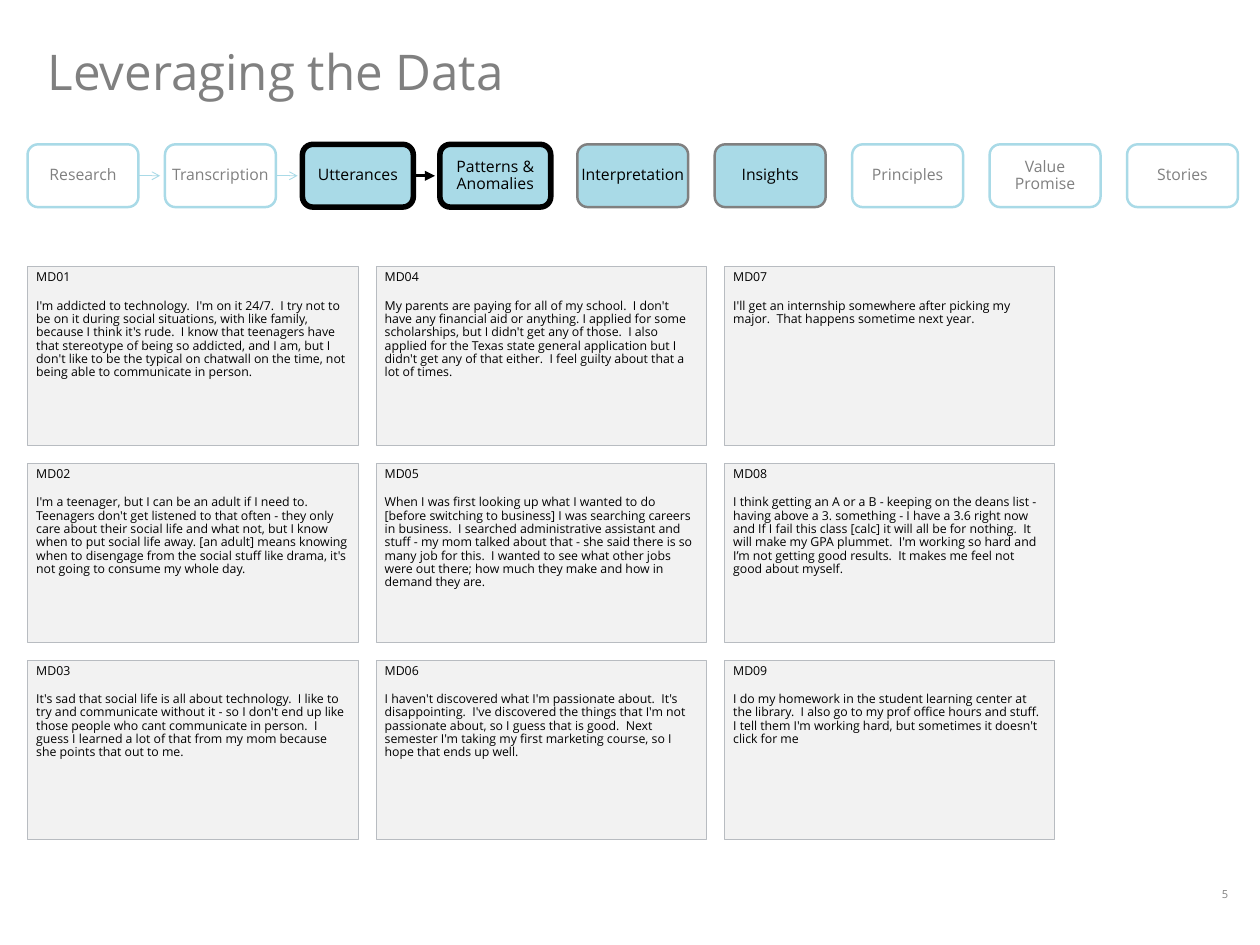
from dataclasses import dataclass

from lxml import etree
from pptx import Presentation
from pptx import util as u
from pptx.dml.color import RGBColor
from pptx.enum import shapes, text
from pptx.oxml import ns


@dataclass(frozen=True)
class Theme:
    font: str = "Open Sans"
    black: str = "000000"
    grey: str = "808080"
    white: str = "FFFFFF"
    aqua: str = "A9DAE7"
    card_fill: str = "F2F2F2"
    card_line: str = "B8BCC1"
    title_size: float = 40
    step_size: float = 12.8
    quote_size: float = 10
    number_size: float = 9
    line_spacing: float = 0.9


THEME = Theme()

LEFT = 0.79
STEP_TOP, STEP_WIDTH, STEP_HEIGHT, STEP_PITCH = 4.14, 3.18, 1.8, 3.94
ARROW_LENGTH = 0.62
CARD_TOP, CARD_WIDTH, CARD_HEIGHT = 7.65, 9.47, 5.13
CARD_PITCH_X, CARD_PITCH_Y, CARD_ROWS = 9.99, 5.64, 3

STEP_STYLES = {
    "outside": (THEME.white, THEME.aqua, 2, THEME.grey),
    "current": (THEME.aqua, THEME.black, 4.5, THEME.black),
    "next": (THEME.aqua, THEME.grey, 2, THEME.black),
}

STEPS = [
    ("Research", "outside"),
    ("Transcription", "outside"),
    ("Utterances", "current"),
    ("Patterns & Anomalies", "current"),
    ("Interpretation", "next"),
    ("Insights", "next"),
    ("Principles", "outside"),
    ("Value\nPromise", "outside"),
    ("Stories", "outside"),
]

ARROWS = [
    (THEME.aqua, 0.75, "arrow"),
    (THEME.aqua, 0.75, "arrow"),
    (THEME.black, 2.75, "triangle"),
]

QUOTES = [
    "I'm addicted to technology.  I'm on it 24/7.  I try not to be on it during social situations, "
    "with like family, because I think it's rude.  I know that teenagers have that stereotype of "
    "being so addicted, and I am, but I don't like to be the typical on chatwall on the time, not "
    "being able to communicate in person.",
    "I'm a teenager, but I can be an adult if I need to.  Teenagers don't get listened to that "
    "often - they only care about their social life and what not, but I know when to put social "
    "life away. [an adult] means knowing when to disengage from the social stuff like drama, it's "
    "not going to consume my whole day.",
    "It's sad that social life is all about technology.  I like to try and communicate without it "
    "- so I don't end up like those people who cant communicate in person.  I guess I learned a "
    "lot of that from my mom because she points that out to me.",
    "My parents are paying for all of my school.  I don't have any financial aid or anything. I "
    "applied for some scholarships, but I didn't get any of those.  I also applied for the Texas "
    "state general application but I didn't get any of that either.  I feel guilty about that a "
    "lot of times.",
    "When I was first looking up what I wanted to do [before switching to business] I was "
    "searching careers in business.  I searched administrative assistant and stuff - my mom talked "
    "about that - she said there is so many job for this.  I wanted to see what other jobs were "
    "out there; how much they make and how in demand they are.",
    "I haven't discovered what I'm passionate about.  It's disappointing.  I've discovered the "
    "things that I'm not passionate about, so I guess that is good.  Next semester I'm taking my "
    "first marketing course, so I hope that ends up well.",
    "I'll get an internship somewhere after picking my major.  That happens sometime next year.",
    "I think getting an A or a B - keeping on the deans list - having above a 3. something - I "
    "have a 3.6 right now and If I fail this class [calc] it will all be for nothing.  It will "
    "make my GPA plummet.  I'm working so hard and I’m not getting good results.  It makes me feel "
    "not good about myself.",
    "I do my homework in the student learning center at the library.  I also go to my prof office "
    "hours and stuff.  I tell them I'm working hard, but sometimes it doesn't click for me",
]


def write_text(shape, content, *, size, color=THEME.black, align=text.PP_ALIGN.LEFT,
               anchor=text.MSO_ANCHOR.TOP, margins=(0.25, 0.13), gap=0):
    frame = shape.text_frame
    frame.word_wrap = True
    frame.auto_size = text.MSO_AUTO_SIZE.NONE
    frame.vertical_anchor = anchor
    frame.margin_left = frame.margin_right = u.Cm(margins[0])
    frame.margin_top = frame.margin_bottom = u.Cm(margins[1])
    frame.text = content
    for index, paragraph in enumerate(frame.paragraphs):
        paragraph.alignment = align
        paragraph.line_spacing = THEME.line_spacing
        paragraph.space_before = u.Pt(gap if index else 0)
        paragraph.space_after = u.Pt(0)
        paragraph.font.name = THEME.font
        paragraph.font.size = u.Pt(size)
        paragraph.font.color.rgb = RGBColor.from_string(color)


class SlideBuilder:
    def __init__(self, theme, slide):
        self.theme = theme
        self.slide = slide

    def title(self, content, left, top, width, height):
        shape = self.slide.shapes.title
        shape.left, shape.top = u.Cm(left), u.Cm(top)
        shape.width, shape.height = u.Cm(width), u.Cm(height)
        write_text(shape, content, size=self.theme.title_size, color=self.theme.grey,
                   anchor=text.MSO_ANCHOR.MIDDLE, margins=(0, 0))

    def box(self, kind, left, top, width, height, fill, line, line_width):
        shape = self.slide.shapes.add_shape(
            kind, u.Cm(left), u.Cm(top), u.Cm(width), u.Cm(height))
        shape.shadow.inherit = False
        shape.fill.solid()
        shape.fill.fore_color.rgb = RGBColor.from_string(fill)
        shape.line.color.rgb = RGBColor.from_string(line)
        shape.line.width = u.Pt(line_width)
        return shape

    def step(self, label, style, left):
        fill, line, line_width, color = STEP_STYLES[style]
        shape = self.box(shapes.MSO_SHAPE.ROUNDED_RECTANGLE, left, STEP_TOP,
                         STEP_WIDTH, STEP_HEIGHT, fill, line, line_width)
        write_text(shape, label, size=self.theme.step_size, color=color,
                   align=text.PP_ALIGN.CENTER, anchor=text.MSO_ANCHOR.MIDDLE, margins=(0, 0.13))
        return shape

    def arrow(self, source, color, line_width, head):
        start = source.left + source.width
        middle = source.top + source.height // 2
        connector = self.slide.shapes.add_connector(
            shapes.MSO_CONNECTOR.STRAIGHT, start, middle, start + u.Cm(ARROW_LENGTH), middle)
        connector.begin_connect(source, 3)
        connector.line.color.rgb = RGBColor.from_string(color)
        connector.line.width = u.Pt(line_width)
        etree.SubElement(connector.line._get_or_add_ln(), ns.qn("a:tailEnd"), type=head)
        etree.SubElement(connector._element.spPr, ns.qn("a:effectLst"))

    def card(self, code, quote, left, top):
        shape = self.box(shapes.MSO_SHAPE.RECTANGLE, left, top, CARD_WIDTH, CARD_HEIGHT,
                         self.theme.card_fill, self.theme.card_line, 0.5)
        write_text(shape, f"{code}\n{quote}", size=self.theme.quote_size, gap=12.25)

    def number(self, content, left, top, width, height):
        shape = self.slide.shapes.add_textbox(
            u.Cm(left), u.Cm(top), u.Cm(width), u.Cm(height))
        write_text(shape, content, size=self.theme.number_size, color=self.theme.grey,
                   align=text.PP_ALIGN.CENTER)


def main():
    presentation = Presentation()
    presentation.slide_width = u.Cm(36.12)
    presentation.slide_height = u.Cm(27.1)
    slide = presentation.slides.add_slide(presentation.slide_layouts[5])
    builder = SlideBuilder(THEME, slide)

    builder.title("Leveraging the Data", 1.37, 1.3, 32.18, 1.7)
    steps = [builder.step(label, style, LEFT + index * STEP_PITCH)
             for index, (label, style) in enumerate(STEPS)]
    for source, arrow in zip(steps, ARROWS):
        builder.arrow(source, *arrow)
    for index, quote in enumerate(QUOTES):
        column, row = divmod(index, CARD_ROWS)
        builder.card(f"MD{index + 1:02}", quote,
                     LEFT + column * CARD_PITCH_X, CARD_TOP + row * CARD_PITCH_Y)
    builder.number("5", 34.47, 25.35, 1.3, 0.76)

    presentation.save("out.pptx")


if __name__ == "__main__":
    main()
